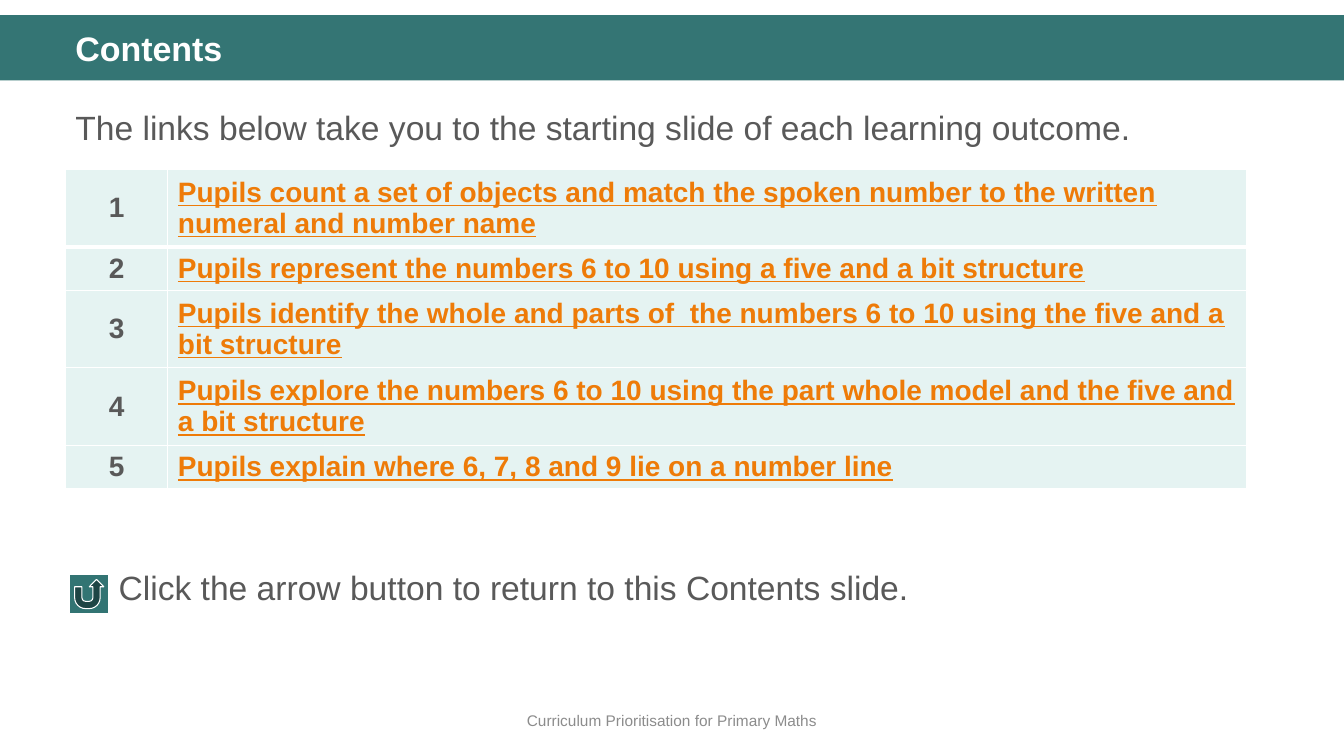
import pptx
import pptx.util
import pptx.dml.color
import pptx.enum.shapes
import pptx.enum.text
import pptx.oxml
import pptx.oxml.ns
from dataclasses import dataclass

Cm = pptx.util.Cm
Pt = pptx.util.Pt
Shape = pptx.enum.shapes.MSO_SHAPE
Align = pptx.enum.text.PP_ALIGN
Anchor = pptx.enum.text.MSO_ANCHOR


@dataclass(frozen=True)
class Theme:
    font: str = "Arial"
    band: str = "347574"
    icon: str = "327473"
    white: str = "FFFFFF"
    cell: str = "E5F3F2"
    ink: str = "595959"
    link: str = "EE7B08"
    mute: str = "8C8C8C"
    title: float = 24.3
    body: float = 24
    item: float = 20
    foot: float = 11


LOOK = Theme()
WIDE, HIGH = 33.87, 19.05
LEFT = 1.65

# Learning outcomes and the number of lines each one fills
GOALS = [
    ("Pupils count a set of objects and match the spoken number to the written "
     "numeral and number name", 2),
    ("Pupils represent the numbers 6 to 10 using a five and a bit structure", 1),
    ("Pupils identify the whole and parts of  the numbers 6 to 10 using the five "
     "and a bit structure", 2),
    ("Pupils explore the numbers 6 to 10 using the part whole model and the five "
     "and a bit structure", 2),
    ("Pupils explain where 6, 7, 8 and 9 lie on a number line", 1),
]


def tint(code):
    return pptx.dml.color.RGBColor.from_string(code)


def write(frame, text, size=LOOK.body, color=LOOK.ink, bold=False, line=False,
          align=Align.LEFT, space=None):
    """Put one formatted paragraph into a text frame."""
    frame.word_wrap = True
    para = frame.paragraphs[0]
    para.alignment = align
    if space:
        para.line_spacing = space
    run = para.add_run()
    run.text = text
    font = run.font
    font.name, font.size = LOOK.font, Pt(size)
    font.bold, font.underline = bold, line
    font.color.rgb = tint(color)


def label(slide, box, text, anchor=Anchor.TOP, **style):
    frame = slide.shapes.add_textbox(*map(Cm, box)).text_frame
    frame.vertical_anchor = anchor
    write(frame, text, **style)


def block(slide, kind, box, fill, edge=None):
    shape = slide.shapes.add_shape(kind, *map(Cm, box))
    shape.shadow.inherit = False
    shape.fill.solid()
    shape.fill.fore_color.rgb = tint(fill)
    if edge:
        shape.line.color.rgb = tint(edge)
        shape.line.width = Pt(0.75)
    else:
        shape.line.fill.background()


def border(cell, side, width):
    xml = (f'<a:{side} {pptx.oxml.ns.nsdecls("a")} w="{Pt(width)}"><a:solidFill>'
           f'<a:srgbClr val="{LOOK.white}"/></a:solidFill></a:{side}>')
    cell._tc.get_or_add_tcPr().append(pptx.oxml.parse_xml(xml))


def head(slide, box):
    # Colour band with the slide title
    x, y, w, h = box
    block(slide, Shape.RECTANGLE, box, LOOK.band)
    label(slide, (x + LEFT, y + 0.31, w - 2.93, 1.2), "Contents",
          size=LOOK.title, color=LOOK.white, bold=True, space=0.9)


def goals(slide, box):
    # Table of numbered outcomes; the first row has a thicker lower rule
    x, y, w, unit = box
    tall = [0.26 + unit * lines for _, lines in GOALS]
    table = slide.shapes.add_table(
        len(GOALS), 2, *map(Cm, (x, y, w, sum(tall)))).table
    table.first_row = table.horz_banding = False
    table.columns[0].width = Cm(2.58)
    table.columns[1].width = Cm(w - 2.58)
    for row, (goal, _) in enumerate(GOALS):
        table.rows[row].height = Cm(tall[row])
        parts = [(str(row + 1), dict(align=Align.CENTER)),
                 (goal, dict(color=LOOK.link, line=True))]
        for col, (text, style) in enumerate(parts):
            cell = table.cell(row, col)
            cell.vertical_anchor = Anchor.MIDDLE
            write(cell.text_frame, text, size=LOOK.item, bold=True, **style)
            for side in ("lnL", "lnR", "lnT", "lnB"):
                thick = (row, side) in ((0, "lnB"), (1, "lnT"))
                border(cell, side, 3 if thick else 1)
            cell.fill.solid()
            cell.fill.fore_color.rgb = tint(LOOK.cell)


def hint(slide, box):
    # Return button and its explanation
    x, y, w, h = box
    side = 0.98
    block(slide, Shape.ACTION_BUTTON_RETURN, (x, y + 0.33, side, side),
          LOOK.icon, LOOK.white)
    label(slide, (x + side, y, w - side, h),
          "Click the arrow button to return to this Contents slide.")


def main():
    deck = pptx.Presentation()
    deck.slide_width, deck.slide_height = Cm(WIDE), Cm(HIGH)
    slide = deck.slides.add_slide(deck.slide_layouts[6])
    head(slide, (0, 0.38, WIDE, 1.65))
    label(slide, (LEFT, 2.36, 30.94, 1.6),
          "The links below take you to the starting slide of each learning outcome.",
          space=1.2)
    goals(slide, (LEFT, 4.27, 29.76, 0.78))
    hint(slide, (1.76, 14.15, 29.73, 1.28))
    label(slide, (0, 17.65, WIDE, 1.02), "Curriculum Prioritisation for Primary Maths",
          anchor=Anchor.MIDDLE, size=LOOK.foot, color=LOOK.mute, align=Align.CENTER)
    deck.save("out.pptx")


if __name__ == "__main__":
    main()
